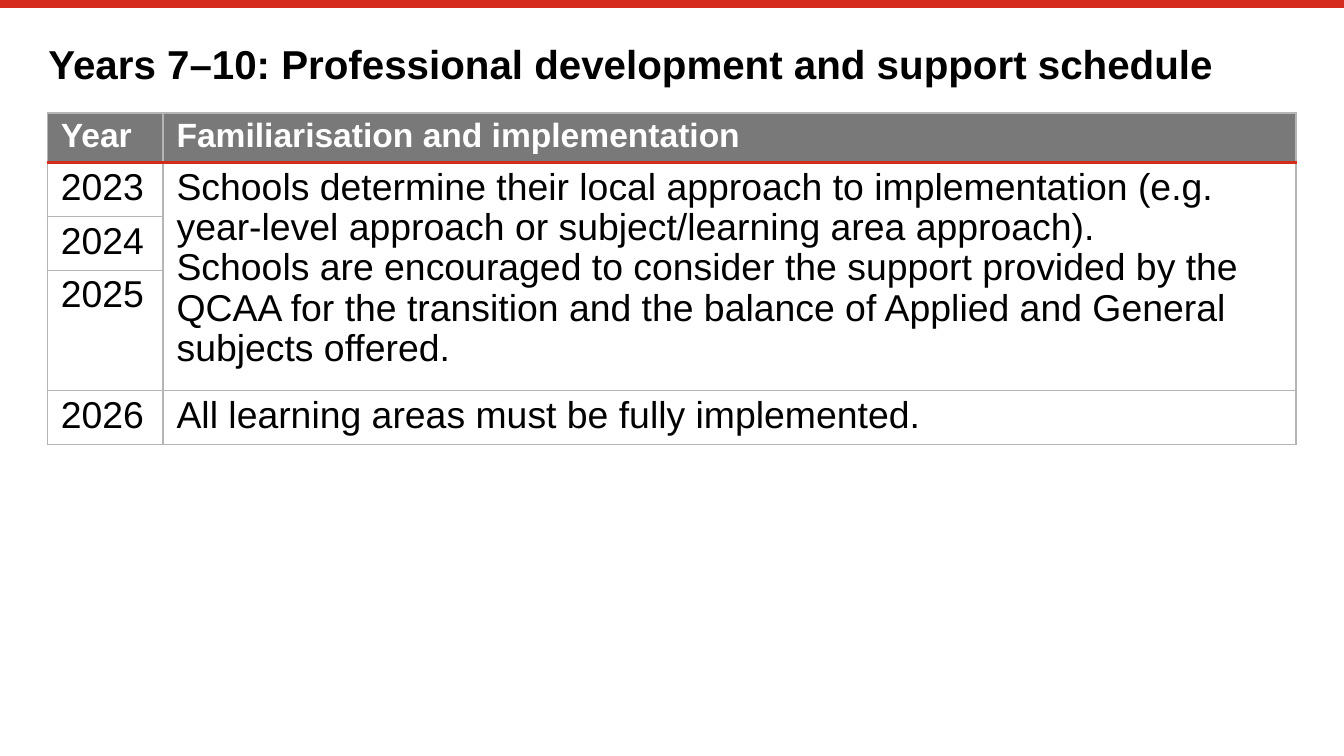
from lxml import etree
from pptx import Presentation
from pptx import util as u
from pptx.dml.color import RGBColor
from pptx.enum import shapes, text
from pptx.oxml.ns import qn

COLOURS = {"red": "D52B1E", "grey": "797979", "rule": "B5B5B5", "black": "000000", "white": "FFFFFF"}
FONT = "Arial"


def rgb(name):
    return RGBColor.from_string(COLOURS[name])


class SchedulePage:
    def __init__(self, page):
        self.page = page

    def style(self, frame, size, colour, bold, spacing):
        for para in frame.paragraphs:
            para.line_spacing = spacing
            for span in para.runs:
                span.font.name = FONT
                span.font.size = u.Pt(size)
                span.font.bold = bold
                span.font.color.rgb = rgb(colour)

    def top_bar(self, width, weight):
        line = self.page.shapes.add_connector(
            shapes.MSO_CONNECTOR.STRAIGHT, 0, u.Pt(weight / 2), u.Pt(width), u.Pt(weight / 2))
        line.line.color.rgb = rgb("red")
        line.line.width = u.Pt(weight)
        etree.SubElement(line._element.spPr, qn("a:effectLst"))

    def title(self, wording, left, top, width, height):
        box = self.page.shapes.add_textbox(u.Pt(left), u.Pt(top), u.Pt(width), u.Pt(height))
        frame = box.text_frame
        frame.margin_left = frame.margin_right = frame.margin_top = frame.margin_bottom = 0
        frame.word_wrap = True
        frame.vertical_anchor = text.MSO_ANCHOR.MIDDLE
        frame.text = wording
        self.style(frame, 21.6, "black", True, 0.9)

    def border(self, cell, side, colour, weight):
        line = etree.SubElement(cell._tc.get_or_add_tcPr(), qn("a:ln" + side), w=str(u.Pt(weight)))
        fill = etree.SubElement(line, qn("a:solidFill"))
        etree.SubElement(fill, qn("a:srgbClr"), val=COLOURS[colour])

    def format_cell(self, cell, row):
        header = row == 0
        cell.margin_left = cell.margin_right = u.Pt(7.2)
        cell.margin_top = cell.margin_bottom = u.Pt(2.8)
        red_sides = {0: "B", 1: "T"}
        for side in "LRTB":
            if red_sides.get(row) == side:
                self.border(cell, side, "red", 1.5)
            else:
                self.border(cell, side, "rule", 1)
        if header:
            cell.fill.solid()
            cell.fill.fore_color.rgb = rgb("grey")
            self.style(cell.text_frame, 18, "white", True, 0.97)
        else:
            cell.fill.background()
            self.style(cell.text_frame, 20, "black", False, 0.97)

    def table(self, rows, left, top, widths, heights, merge):
        table = self.page.shapes.add_table(
            len(rows), len(widths), u.Pt(left), u.Pt(top),
            u.Pt(sum(widths)), u.Pt(sum(heights))).table
        table.horz_banding = False
        for column, width in zip(table.columns, widths):
            column.width = u.Pt(width)
        for row, (wordings, height) in enumerate(zip(rows, heights)):
            table.rows[row].height = u.Pt(height)
            for column, wording in enumerate(wordings):
                cell = table.cell(row, column)
                cell.text_frame.text = wording
                self.format_cell(cell, row)
        start, end = merge
        table.cell(*start).merge(table.cell(*end))


def main():
    deck = Presentation()
    deck.slide_width, deck.slide_height = u.Pt(720), u.Pt(405)
    schedule = SchedulePage(deck.slides.add_slide(deck.slide_layouts[6]))
    schedule.top_bar(720, 4.2)
    schedule.title("Years 7–10: Professional development and support schedule", 25.9, 21.4, 669, 28)
    approach = (
        "Schools determine their local approach to implementation "
        "(e.g. year-level approach or subject/learning area approach).\n"
        "Schools are encouraged to consider the support provided by the QCAA "
        "for the transition and the balance of Applied and General subjects offered.")
    rows = [
        ("Year", "Familiarisation and implementation"),
        ("2023", approach),
        ("2024", ""),
        ("2025", ""),
        ("2026", "All learning areas must be fully implemented."),
    ]
    schedule.table(rows, 25.4, 60.6, [62, 607], [25.4, 27.8, 27.8, 61.7, 27.8], ((1, 1), (3, 1)))
    deck.save("out.pptx")


if __name__ == "__main__":
    main()
